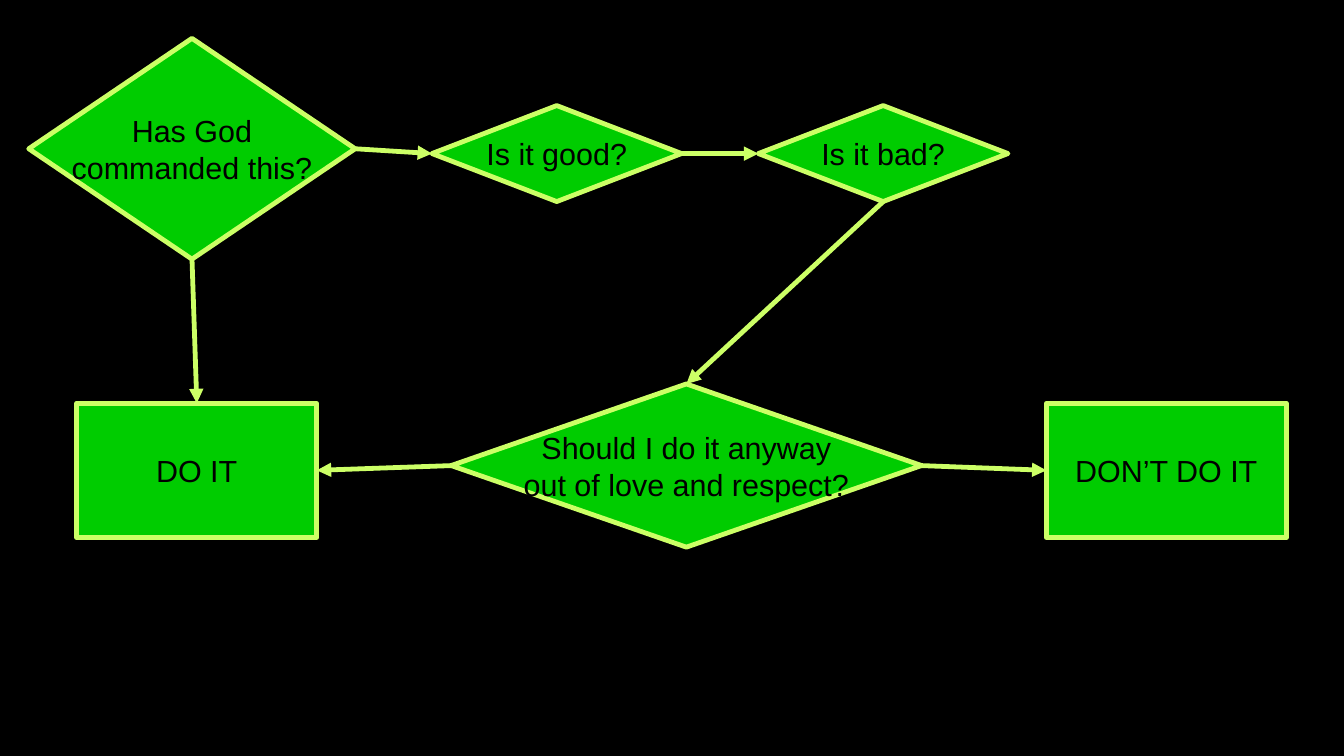
"""Build a decision flowchart slide with green boxes on black."""
from pptx import Presentation
from pptx.dml.color import RGBColor
from pptx.enum.shapes import MSO_CONNECTOR, MSO_SHAPE
from pptx.enum.text import MSO_ANCHOR, PP_ALIGN
from pptx.oxml.ns import qn
from pptx.util import Cm, Pt
from lxml import etree

BLACK = RGBColor(0x00, 0x00, 0x00)
GREEN = RGBColor(0x00, 0xCC, 0x00)
LIME = RGBColor(0xCC, 0xFF, 0x66)
DIAMOND = MSO_SHAPE.DIAMOND
RECTANGLE = MSO_SHAPE.RECTANGLE
STRAIGHT = MSO_CONNECTOR.STRAIGHT
MIDDLE = MSO_ANCHOR.MIDDLE
CENTER = PP_ALIGN.CENTER
TOP, LEFT, BOTTOM, RIGHT = range(4)

BOXES = {
    "commanded": (DIAMOND, 0.6, 0.8, 6.8, 4.6, "Has God\vcommanded this?"),
    "good": (DIAMOND, 9, 2.2, 5.2, 2, "Is it good?"),
    "anyway": (DIAMOND, 9.4, 8, 9.8, 3.4,
               "Should I do it anyway\vout of love and respect?"),
    "bad": (DIAMOND, 15.8, 2.2, 5.2, 2, "Is it bad?"),
    "do": (RECTANGLE, 1.6, 8.4, 5, 2.8, "DO IT"),
    "do not": (RECTANGLE, 21.8, 8.4, 5, 2.8, "DON’T DO IT"),
}
ARROWS = [
    ("commanded", RIGHT, "good", LEFT),
    ("good", RIGHT, "bad", LEFT),
    ("commanded", BOTTOM, "do", TOP),
    ("bad", BOTTOM, "anyway", TOP),
    ("anyway", LEFT, "do", RIGHT),
    ("anyway", RIGHT, "do not", LEFT),
]


def style_line(line):
    line.color.rgb = LIME
    line.width = Pt(2.83)
    outline = line._get_or_add_ln()
    etree.SubElement(outline, qn("a:round"))
    return outline


deck = Presentation()
deck.slide_width, deck.slide_height = Cm(28), Cm(15.75)
page = deck.slides.add_slide(deck.slide_layouts[6])
page.background.fill.solid()
page.background.fill.fore_color.rgb = BLACK

shapes = {}
for name, (kind, left, top, width, height, text) in BOXES.items():
    box = page.shapes.add_shape(kind, Cm(left), Cm(top), Cm(width), Cm(height))
    box.shadow.inherit = False
    box.fill.solid()
    box.fill.fore_color.rgb = GREEN
    style_line(box.line)
    frame = box.text_frame
    frame.word_wrap = False
    frame.vertical_anchor = MIDDLE
    frame.margin_left = frame.margin_right = Cm(0.3)
    frame.margin_top = frame.margin_bottom = Cm(0.18)
    para = frame.paragraphs[0]
    para.text = text
    para.alignment = CENTER
    for span in para.runs:
        span.font.name = "Arial"
        span.font.size = Pt(18)
        span.font.color.rgb = BLACK
    shapes[name] = box

for start, start_side, end, end_side in ARROWS:
    arrow = page.shapes.add_connector(STRAIGHT, 0, 0, 0, 0)
    arrow.begin_connect(shapes[start], start_side)
    arrow.end_connect(shapes[end], end_side)
    outline = style_line(arrow.line)
    etree.SubElement(outline, qn("a:tailEnd"), type="triangle")
    etree.SubElement(arrow._element.spPr, qn("a:effectLst"))

deck.save("out.pptx")
